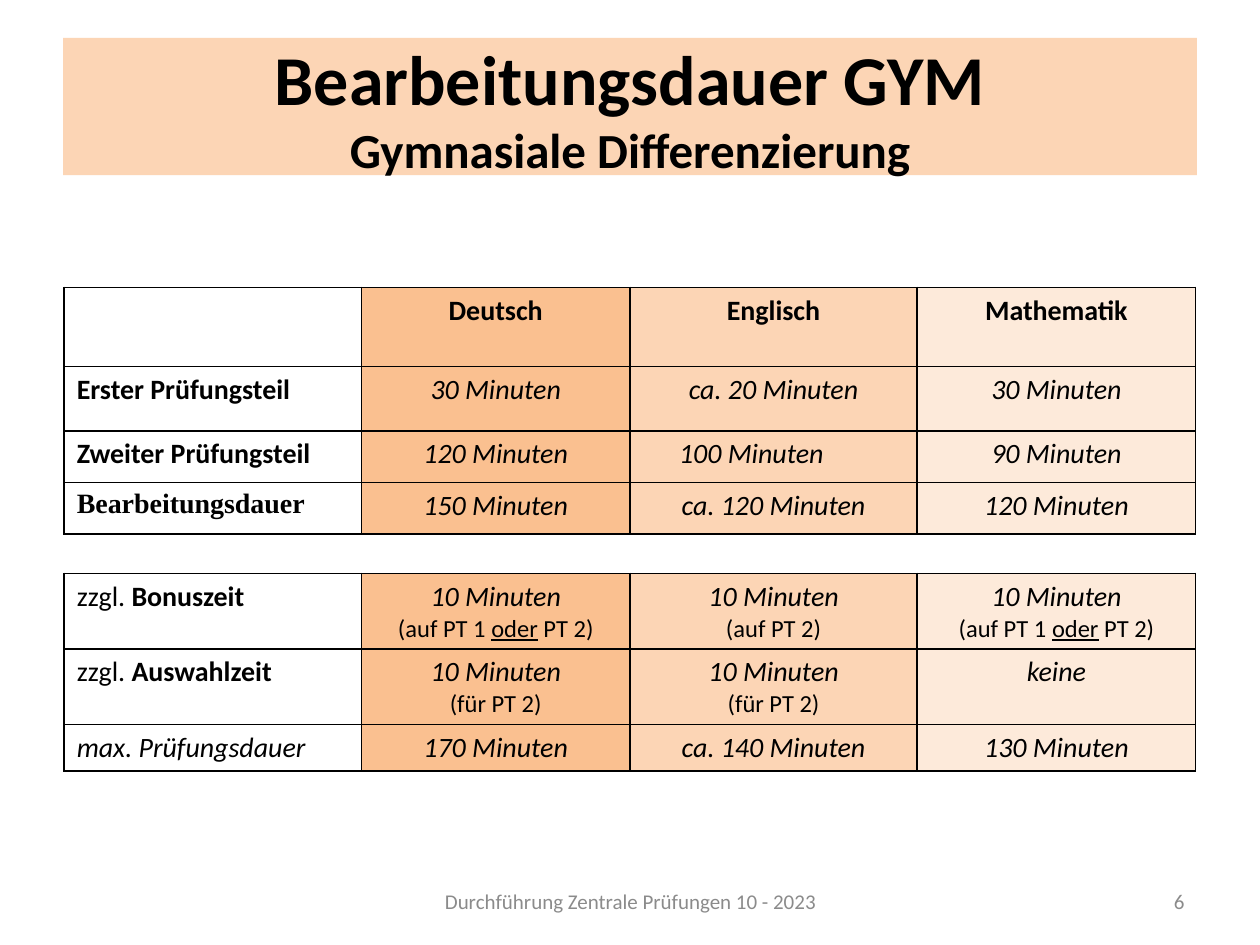
from lxml import etree
from pptx import Presentation
from pptx import util as u
from pptx.dml.color import RGBColor
from pptx.enum import text
from pptx.oxml.ns import qn

WIDE, HIGH = 10, 7.5
EDGE = 0.51
COLS = [2.36, 2.13, 2.28, 2.21]
FILLS = [None, "FAC090", "FCD5B5", "FDEADA"]
SMALL = "s:(auf PT 1 |su:oder|s: PT 2)"
TEN = "i:10 Minuten"

EXAM = [
    [[], ["b:Deutsch"], ["b:Englisch"], ["b:Mathematik"]],
    [["b:Erster Prüfungsteil"], ["i:30 Minuten"], ["i:ca. 20 Minuten"], ["i:30 Minuten"]],
    [["b:Zweiter Prüfungsteil"], ["i:120 Minuten"], ["in:100 Minuten"], ["i:90 Minuten"]],
    [["bt:Bearbeitungsdauer"], ["i:150 Minuten"], ["i:ca. 120 Minuten"], ["i:120 Minuten"]],
]
EXTRA = [
    [[":zzgl. |b:Bonuszeit"], [TEN, SMALL], [TEN, "s:(auf PT 2)"], [TEN, SMALL]],
    [[":zzgl.|b: Auswahlzeit"], [TEN, "s:(für PT 2)"], [TEN, "s:(für PT 2)"], ["i:keine"]],
    [["i:max. Prüfungsdauer"], ["i:170 Minuten"], ["i:ca. 140 Minuten"], ["i:130 Minuten"]],
]


def color(code):
    return RGBColor.from_string(code)


class Deck:
    face = "Calibri"
    ink = "000000"
    line = 0.96

    def __init__(self):
        self.prs = Presentation()
        self.prs.slide_width = u.Inches(WIDE)
        self.prs.slide_height = u.Inches(HIGH)
        self.slide = self.prs.slides.add_slide(self.prs.slide_layouts[5])

    def style(self, run, size, ink=None, bold=False, slant=False, face=None):
        font = run.font
        font.name, font.size = face or self.face, u.Pt(size)
        font.bold, font.italic = bold, slant
        font.color.rgb = color(ink or self.ink)

    def title(self, lines, sizes, box, fill):
        shape = self.slide.shapes.title
        shape.left, shape.top, shape.width, shape.height = map(u.Inches, box)
        shape.fill.solid()
        shape.fill.fore_color.rgb = color(fill)
        frame = shape.text_frame
        frame.text = "\v".join(lines)
        frame.auto_size = text.MSO_AUTO_SIZE.NONE
        frame.vertical_anchor = text.MSO_ANCHOR.MIDDLE
        para = frame.paragraphs[0]
        para.alignment = text.PP_ALIGN.CENTER
        for run, size in zip(para.runs, sizes):
            self.style(run, size, bold=True)

    def note(self, words, box, align):
        frame = self.slide.shapes.add_textbox(*map(u.Inches, box)).text_frame
        frame.word_wrap = True
        frame.vertical_anchor = text.MSO_ANCHOR.MIDDLE
        frame.text = words
        para = frame.paragraphs[0]
        para.alignment = align
        self.style(para.runs[0], 12, "8B8B8B")

    def border(self, cell):
        props = cell._tc.get_or_add_tcPr()
        for spot, side in enumerate(("lnL", "lnR", "lnT", "lnB")):
            edge = etree.Element(qn("a:" + side), w=str(u.Pt(self.line)))
            fill = etree.SubElement(edge, qn("a:solidFill"))
            etree.SubElement(fill, qn("a:srgbClr"), val=self.ink)
            props.insert(spot, edge)

    def label(self, para, marks, first):
        para.alignment = text.PP_ALIGN.LEFT if first else text.PP_ALIGN.CENTER
        for part in marks.split("|"):
            flags, words = part.split(":", 1)
            run = para.add_run()
            run.text = words
            self.style(run, 14 if "s" in flags else 16, bold="b" in flags,
                       slant="i" in flags,
                       face="Times New Roman" if "t" in flags else None)
            run.font.underline = "u" in flags
            if "n" in flags:
                para.alignment = text.PP_ALIGN.LEFT
                para._p.get_or_add_pPr().set("marL", str(u.Inches(0.29)))

    def table(self, data, top, rows):
        box = map(u.Inches, (EDGE, top, sum(COLS), sum(rows)))
        grid = self.slide.shapes.add_table(len(rows), len(COLS), *box).table
        grid.first_row = grid.horz_banding = False
        for col, size in zip(grid.columns, COLS):
            col.width = u.Inches(size)
        for row, size, cells in zip(grid.rows, rows, data):
            row.height = u.Inches(size)
            for n, (cell, paras) in enumerate(zip(row.cells, cells)):
                if FILLS[n]:
                    cell.fill.solid()
                    cell.fill.fore_color.rgb = color(FILLS[n])
                else:
                    cell.fill.background()
                self.border(cell)
                frame = cell.text_frame
                for k, marks in enumerate(paras):
                    para = frame.add_paragraph() if k else frame.paragraphs[0]
                    self.label(para, marks, n == 0)


def main():
    deck = Deck()
    deck.title(["Bearbeitungsdauer GYM", "Gymnasiale Differenzierung"],
               (40, 28), (0.5, 0.3, 9, 1.09), "FCD5B5")
    deck.note("Durchführung Zentrale Prüfungen 10 - 2023",
              (3.42, 6.95, 3.17, 0.4), text.PP_ALIGN.CENTER)
    deck.note("6", (7.17, 6.95, 2.33, 0.4), text.PP_ALIGN.RIGHT)
    deck.table(EXAM, 2.28, [0.63, 0.51, 0.41, 0.41])
    deck.table(EXTRA, 4.55, [0.52, 0.52, 0.32])
    deck.prs.save("out.pptx")


if __name__ == "__main__":
    main()
